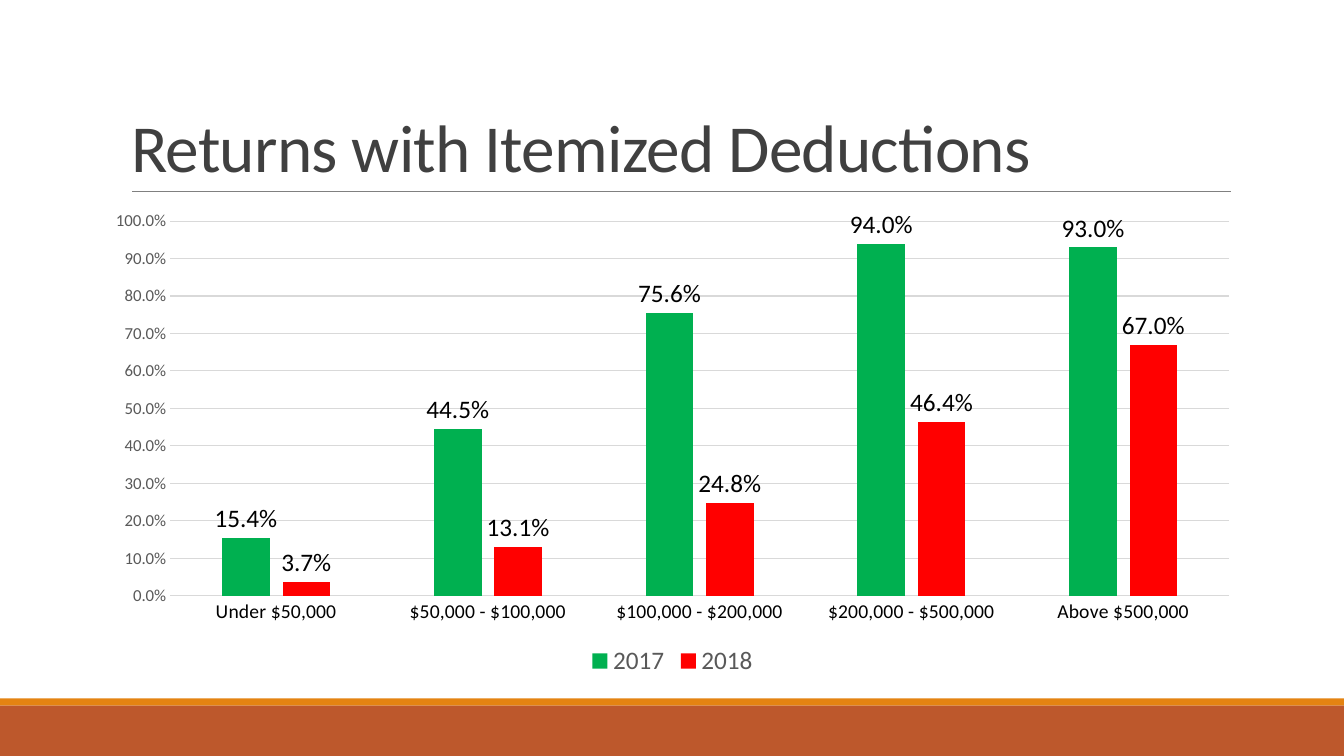
from dataclasses import dataclass

from lxml import etree
from pptx import Presentation
from pptx import util as u
from pptx.chart import data as chart_data
from pptx.dml.color import RGBColor
from pptx.enum import chart as ch, shapes, text
from pptx.oxml.ns import qn


@dataclass(frozen=True)
class Theme:
    font: str = "Calibri"
    title: str = "404040"
    rule: str = "808080"
    band: str = "BD582C"
    stripe: str = "E48312"
    grid: str = "D9D9D9"
    muted: str = "595959"
    strong: str = "000000"
    paper: str = "FFFFFF"
    title_size: int = 48
    label_size: int = 18
    category_size: int = 14
    scale_size: int = 12


THEME = Theme()
PERCENT = "0.0%"
BRACKETS = ["Under $50,000", "$50,000 - $100,000", "$100,000 - $200,000",
            "$200,000 - $500,000", "Above $500,000"]
SHARES = {
    "2017": ("00B050", [0.154, 0.445, 0.756, 0.94, 0.93]),
    "2018": ("FF0000", [0.037, 0.131, 0.248, 0.464, 0.67]),
}


def rgb(code):
    return RGBColor.from_string(code)


def paint(fill, color):
    fill.solid()
    fill.fore_color.rgb = rgb(color)


def style_font(font, size, color):
    font.name = THEME.font
    font.size = u.Pt(size)
    font.bold = False
    font.color.rgb = rgb(color)


def style_line(line, color, width):
    line.color.rgb = rgb(color)
    line.width = u.Pt(width)


def add_footer(slide, left, top, width, height):
    stripe_height = u.Inches(0.07)
    bands = [(top, stripe_height, THEME.stripe),
             (top + stripe_height, height - stripe_height, THEME.band)]
    for band_top, band_height, color in bands:
        band = slide.shapes.add_shape(
            shapes.MSO_SHAPE.RECTANGLE, left, band_top, width, band_height)
        band.shadow.inherit = False
        paint(band.fill, color)
        band.line.fill.background()


def add_heading(slide, left, top, width, height):
    heading = slide.shapes.title
    heading.left, heading.top, heading.width, heading.height = left, top, width, height
    frame = heading.text_frame
    frame.text = "Returns with Itemized Deductions"
    frame.word_wrap = True
    frame.auto_size = text.MSO_AUTO_SIZE.NONE
    frame.vertical_anchor = text.MSO_ANCHOR.BOTTOM
    paragraph = frame.paragraphs[0]
    paragraph.alignment = text.PP_ALIGN.LEFT
    paragraph.line_spacing = 0.85
    run = paragraph.runs[0]
    style_font(run.font, THEME.title_size, THEME.title)
    run.font._element.set("spc", "-50")

    rule_left, rule_top = left + u.Inches(0.11), top + height
    rule = slide.shapes.add_connector(
        shapes.MSO_CONNECTOR.STRAIGHT,
        rule_left, rule_top, rule_left + u.Inches(10.9), rule_top)
    style_line(rule.line, THEME.rule, 0.5)
    etree.SubElement(rule._element.spPr, qn("a:effectLst"))


def style_axes(chart):
    brackets = chart.category_axis
    brackets.major_tick_mark = ch.XL_TICK_MARK.NONE
    style_font(brackets.tick_labels.font, THEME.category_size, THEME.strong)
    style_line(brackets.format.line, THEME.grid, 0.75)

    scale = chart.value_axis
    scale.minimum_scale, scale.maximum_scale, scale.major_unit = 0, 1, 0.1
    scale.major_tick_mark = ch.XL_TICK_MARK.NONE
    scale.tick_labels.number_format = PERCENT
    scale.tick_labels.number_format_is_linked = False
    style_font(scale.tick_labels.font, THEME.scale_size, THEME.muted)
    scale.format.line.fill.background()
    style_line(scale.major_gridlines.format.line, THEME.grid, 0.75)


def style_year(year, color):
    paint(year.format.fill, color)
    year.invert_if_negative = False
    labels = year.data_labels
    labels.show_value = True
    labels.position = ch.XL_LABEL_POSITION.OUTSIDE_END
    labels.number_format = PERCENT
    labels.number_format_is_linked = False
    style_font(labels.font, THEME.label_size, THEME.strong)


def add_deductions_chart(slide, left, top, width, height):
    shares = chart_data.CategoryChartData(number_format=PERCENT)
    shares.categories = BRACKETS
    for name, (_, values) in SHARES.items():
        shares.add_series(name, values)
    chart = slide.shapes.add_chart(
        ch.XL_CHART_TYPE.COLUMN_CLUSTERED, left, top, width, height, shares).chart
    chart.has_title = False
    style_font(chart.font, 10, THEME.strong)
    style_axes(chart)

    plot = chart.plots[0]
    plot.gap_width, plot.overlap = 219, -27
    plot.vary_by_categories = False
    for year in plot.series:
        style_year(year, SHARES[year.name][0])

    chart.has_legend = True
    chart.legend.position = ch.XL_LEGEND_POSITION.BOTTOM
    chart.legend.include_in_layout = False
    style_font(chart.legend.font, THEME.label_size, THEME.muted)


def main():
    deck = Presentation()
    deck.slide_width, deck.slide_height = u.Inches(13.33), u.Inches(7.5)
    slide = deck.slides.add_slide(deck.slide_layouts[5])
    paint(slide.background.fill, THEME.paper)
    footer_top = u.Inches(6.93)
    add_footer(slide, 0, footer_top, deck.slide_width, deck.slide_height - footer_top)
    add_heading(slide, u.Inches(1.2), u.Inches(0.31), u.Inches(11), u.Inches(1.59))
    add_deductions_chart(
        slide, u.Inches(0.92), u.Inches(2), u.Inches(11.5), u.Inches(4.76))
    deck.save("out.pptx")


if __name__ == "__main__":
    main()
